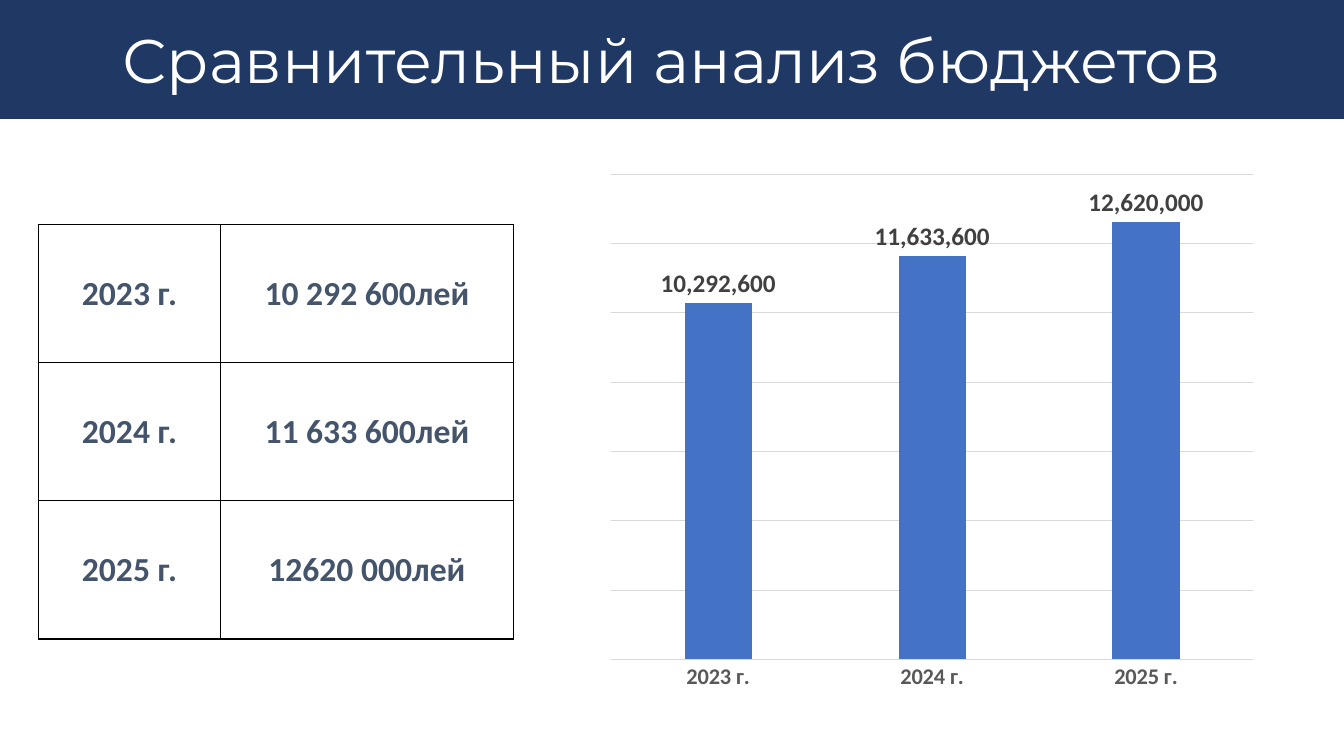
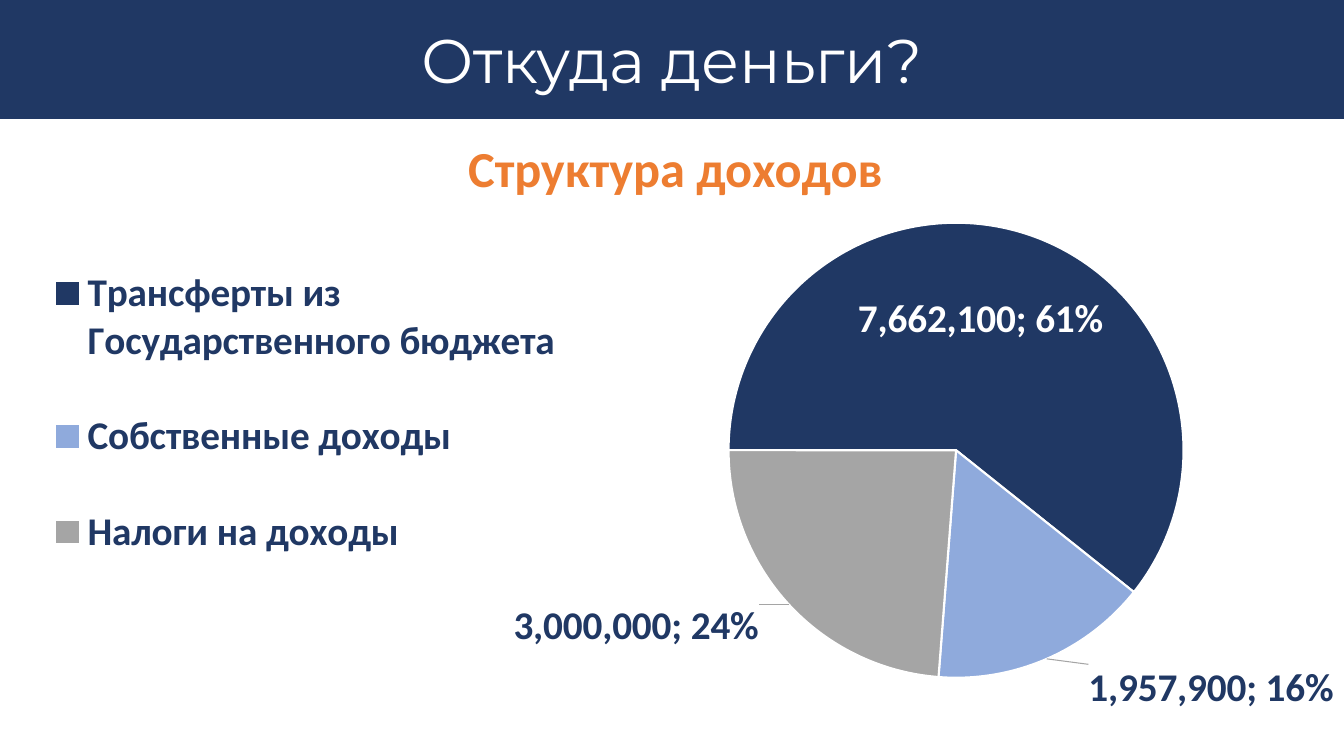
from dataclasses import dataclass

from pptx import Presentation
from pptx.chart.data import CategoryChartData
from pptx.dml.color import RGBColor
from pptx.enum.chart import XL_CHART_TYPE, XL_LABEL_POSITION, XL_LEGEND_POSITION, XL_TICK_MARK
from pptx.enum.shapes import MSO_SHAPE
from pptx.enum.text import MSO_ANCHOR, MSO_AUTO_SIZE, PP_ALIGN
from pptx.oxml import parse_xml
from pptx.oxml.ns import nsdecls
from pptx.util import Inches, Pt

COLUMN = XL_CHART_TYPE.COLUMN_CLUSTERED
PIE = XL_CHART_TYPE.PIE
CENTER_LABEL = XL_LABEL_POSITION.CENTER
OUTSIDE_LABEL = XL_LABEL_POSITION.OUTSIDE_END
LEGEND_RIGHT = XL_LEGEND_POSITION.RIGHT
NO_TICK = XL_TICK_MARK.NONE
RECTANGLE = MSO_SHAPE.RECTANGLE
MIDDLE = MSO_ANCHOR.MIDDLE
NO_AUTO_SIZE = MSO_AUTO_SIZE.NONE
CENTER = PP_ALIGN.CENTER
TITLE_ONLY = 5


@dataclass(frozen=True)
class Theme:
    """Colours, fonts and type sizes shared by the slides."""
    navy: str = "203864"
    white: str = "FFFFFF"
    black: str = "000000"
    slate: str = "44546A"
    orange: str = "ED7D31"
    blue: str = "4472C4"
    light_blue: str = "8FAADC"
    gray: str = "A5A5A5"
    grid: str = "D9D9D9"
    axis_text: str = "595959"
    label_text: str = "404040"
    title_font: str = "Montserrat"
    body_font: str = "Calibri"
    title_size: int = 44
    heading_size: int = 36
    pie_size: int = 28
    table_size: int = 24
    label_size: int = 18
    axis_size: int = 16


THEME = Theme()
BUDGETS = [
    ("2023 г.", "10 292 600лей", 10292600),
    ("2024 г.", "11 633 600лей", 11633600),
    ("2025 г.", "12620 000лей", 12620000),
]
INCOMES = [
    ("Трансферты из Государственного бюджета", 7662100),
    ("Собственные доходы", 1957900),
    ("Налоги на доходы", 3000000),
]
SLICE_STYLES = [
    (THEME.navy, THEME.white, CENTER_LABEL, (-0.01, -0.04)),
    (THEME.light_blue, THEME.navy, OUTSIDE_LABEL, (0.03, 0)),
    (THEME.gray, THEME.navy, OUTSIDE_LABEL, (-0.02, -0.01)),
]


def rgb(color):
    """Return the colour object for a hex string."""
    return RGBColor.from_string(color)


def set_font(font, size, color, bold=True, name=THEME.body_font):
    """Format a font."""
    font.name, font.size, font.bold = name, Pt(size), bold
    font.color.rgb = rgb(color)


def set_line(line, color, width):
    """Give a line its colour and width in points."""
    line.color.rgb = rgb(color)
    line.width = Pt(width)


def add_titled_slide(presentation, text):
    """Add a slide with a navy title band."""
    slide = presentation.slides.add_slide(presentation.slide_layouts[TITLE_ONLY])
    band = slide.shapes.add_shape(RECTANGLE, 0, 0, presentation.slide_width, Inches(1.18))
    band.shadow.inherit = False
    band.fill.solid()
    band.fill.fore_color.rgb = rgb(THEME.navy)
    band.line.fill.background()
    title = slide.shapes.title
    title.element.addprevious(band.element)
    title.left, title.top = Inches(0.17), Inches(0.23)
    title.width, title.height = Inches(13), Inches(0.81)
    frame = title.text_frame
    frame.text = text
    frame.auto_size = NO_AUTO_SIZE
    frame.vertical_anchor = MIDDLE
    paragraph = frame.paragraphs[0]
    paragraph.alignment = CENTER
    paragraph.line_spacing = 0.9
    set_font(paragraph.font, THEME.title_size, THEME.white, False, THEME.title_font)
    return slide


def add_heading(slide, text):
    """Add the centred heading under the title band."""
    box = slide.shapes.add_textbox(Inches(0.23), Inches(1.31), Inches(12.94), Inches(0.71))
    box.text_frame.word_wrap = True
    paragraph = box.text_frame.paragraphs[0]
    paragraph.text = text
    paragraph.alignment = CENTER
    set_font(paragraph.font, THEME.heading_size, THEME.orange)


def format_cell(cell, text):
    """Fill a table cell with centred text and a thin border."""
    properties = cell._tc.get_or_add_tcPr()
    for side in ("lnL", "lnR", "lnT", "lnB"):
        properties.append(parse_xml(
            f'<a:{side} {nsdecls("a")} w="{Pt(1)}"><a:solidFill>'
            f'<a:srgbClr val="{THEME.black}"/></a:solidFill></a:{side}>'))
    cell.fill.background()
    cell.vertical_anchor = MIDDLE
    cell.text = text
    paragraph = cell.text_frame.paragraphs[0]
    paragraph.alignment = CENTER
    set_font(paragraph.font, THEME.table_size, THEME.slate)


def add_budget_table(slide):
    """Add the table of yearly budgets."""
    table = slide.shapes.add_table(
        len(BUDGETS), 2, Inches(0.38), Inches(2.23), Inches(4.71), Inches(4.11)).table
    table.first_row = table.horz_banding = False
    for column, width in zip(table.columns, (1.81, 2.9)):
        column.width = Inches(width)
    for row, (year, amount, _) in zip(table.rows, BUDGETS):
        for cell, text in zip(row.cells, (year, amount)):
            format_cell(cell, text)


def add_chart(slide, kind, values, left, top, width, height):
    """Add an untitled single-series chart from (category, value) pairs."""
    data = CategoryChartData(number_format="#,##0")
    data.categories = [category for category, _ in values]
    data.add_series("Series 1", [value for _, value in values])
    chart = slide.shapes.add_chart(
        kind, Inches(left), Inches(top), Inches(width), Inches(height), data).chart
    chart.has_title = False
    chart.has_legend = False
    chart.font.name = THEME.body_font
    return chart


def add_budget_chart(slide):
    """Add the column chart of yearly budgets."""
    values = [(year, value) for year, _, value in BUDGETS]
    chart = add_chart(slide, COLUMN, values, 5.93, 1.62, 6.63, 5.34)
    plot = chart.plots[0]
    plot.vary_by_categories = False
    plot.gap_width, plot.overlap = 219, -27
    series = plot.series[0]
    series.format.fill.solid()
    series.format.fill.fore_color.rgb = rgb(THEME.blue)
    labels = series.data_labels
    labels.show_value = True
    labels.position = OUTSIDE_LABEL
    set_font(labels.font, THEME.label_size, THEME.label_text)
    category_axis, value_axis = chart.category_axis, chart.value_axis
    category_axis.major_tick_mark = NO_TICK
    set_line(category_axis.format.line, THEME.grid, 0.75)
    set_font(category_axis.tick_labels.font, THEME.axis_size, THEME.axis_text)
    value_axis.minimum_scale, value_axis.maximum_scale = 0, 14000000
    value_axis.major_unit = 2000000
    value_axis.visible = False
    set_line(value_axis.major_gridlines.format.line, THEME.grid, 0.75)


def layout_xml(target="", mode="", **places):
    """Return a manual chart layout element."""
    parts = [("layoutTarget", target)] if target else []
    if mode:
        parts += [("xMode", mode), ("yMode", mode)]
    parts += places.items()
    children = "".join(f'<c:{name} val="{value}"/>' for name, value in parts)
    return parse_xml(f'<c:layout {nsdecls("c")}><c:manualLayout>{children}'
                     '</c:manualLayout></c:layout>')


def replace_layout(parent, anchor, layout):
    """Put a layout after the anchor element of a chart part."""
    for existing in parent.xpath("c:layout"):
        parent.remove(existing)
    anchor.addnext(layout)


def format_slice(point, color, label_color, position):
    """Colour a pie slice and its label."""
    point.format.fill.solid()
    point.format.fill.fore_color.rgb = rgb(color)
    set_line(point.format.line, THEME.white, 1.5)
    set_font(point.data_label.font, THEME.pie_size, label_color)
    point.data_label.position = position


def finish_label(label, offset):
    """Show value and percent on one line, moved by the offset."""
    x, y = offset
    replace_layout(label, label.xpath("c:idx")[0], layout_xml(x=x, y=y))
    label.xpath("c:txPr/a:bodyPr")[0].set("wrap", "none")
    for name in ("showVal", "showPercent"):
        label.xpath(f"c:{name}")[0].set("val", "1")
    label.append(parse_xml(f'<c:separator {nsdecls("c")}>; </c:separator>'))


def add_leader_lines(chart):
    """Draw thin gray lines from the slices to their labels."""
    labels = chart.element.xpath(".//c:ser/c:dLbls")[0]
    for existing in labels.xpath("c:showLeaderLines"):
        labels.remove(existing)
    labels.append(parse_xml(f'<c:showLeaderLines {nsdecls("c")} val="1"/>'))
    labels.append(parse_xml(
        f'<c:leaderLines {nsdecls("c", "a")}><c:spPr><a:ln w="{Pt(0.75)}"><a:solidFill>'
        f'<a:srgbClr val="{THEME.gray}"/></a:solidFill></a:ln></c:spPr></c:leaderLines>'))


def add_income_chart(slide):
    """Add the pie chart of incomes with its legend."""
    chart = add_chart(slide, PIE, INCOMES, 0.23, 1.31, 13.01, 5.93)
    series = chart.plots[0].series[0]
    series.data_labels.show_value = True
    series.data_labels.show_percentage = True
    for index, (color, label_color, position, _) in enumerate(SLICE_STYLES):
        format_slice(series.points[index], color, label_color, position)
    for label, style in zip(chart.element.xpath(".//c:dLbl"), SLICE_STYLES):
        finish_label(label, style[-1])
    add_leader_lines(chart)
    chart.element.xpath(".//c:pieChart")[0].append(
        parse_xml(f'<c:firstSliceAng {nsdecls("c")} val="270"/>'))
    plot_area = chart.element.xpath(".//c:plotArea")[0]
    for existing in plot_area.xpath("c:layout"):
        plot_area.remove(existing)
    plot_area.insert(0, layout_xml("inner", "edge", x=0.538, y=0.124, w=0.347, h=0.817))
    chart.has_legend = True
    chart.legend.position = LEGEND_RIGHT
    chart.legend.include_in_layout = False
    set_font(chart.legend.font, THEME.pie_size, THEME.navy)
    legend = chart.element.xpath(".//c:legend")[0]
    replace_layout(legend, legend.xpath("c:legendPos")[0],
                   layout_xml(mode="edge", x=0.01, y=0.15, w=0.41, h=0.64))


def main():
    """Build and save the presentation."""
    presentation = Presentation()
    presentation.slide_width, presentation.slide_height = Inches(13.33), Inches(7.5)
    comparison = add_titled_slide(presentation, "Сравнительный анализ бюджетов")
    add_budget_table(comparison)
    add_budget_chart(comparison)
    income = add_titled_slide(presentation, "Откуда деньги?")
    add_income_chart(income)
    add_heading(income, "Структура доходов")
    presentation.save("out.pptx")


if __name__ == "__main__":
    main()
